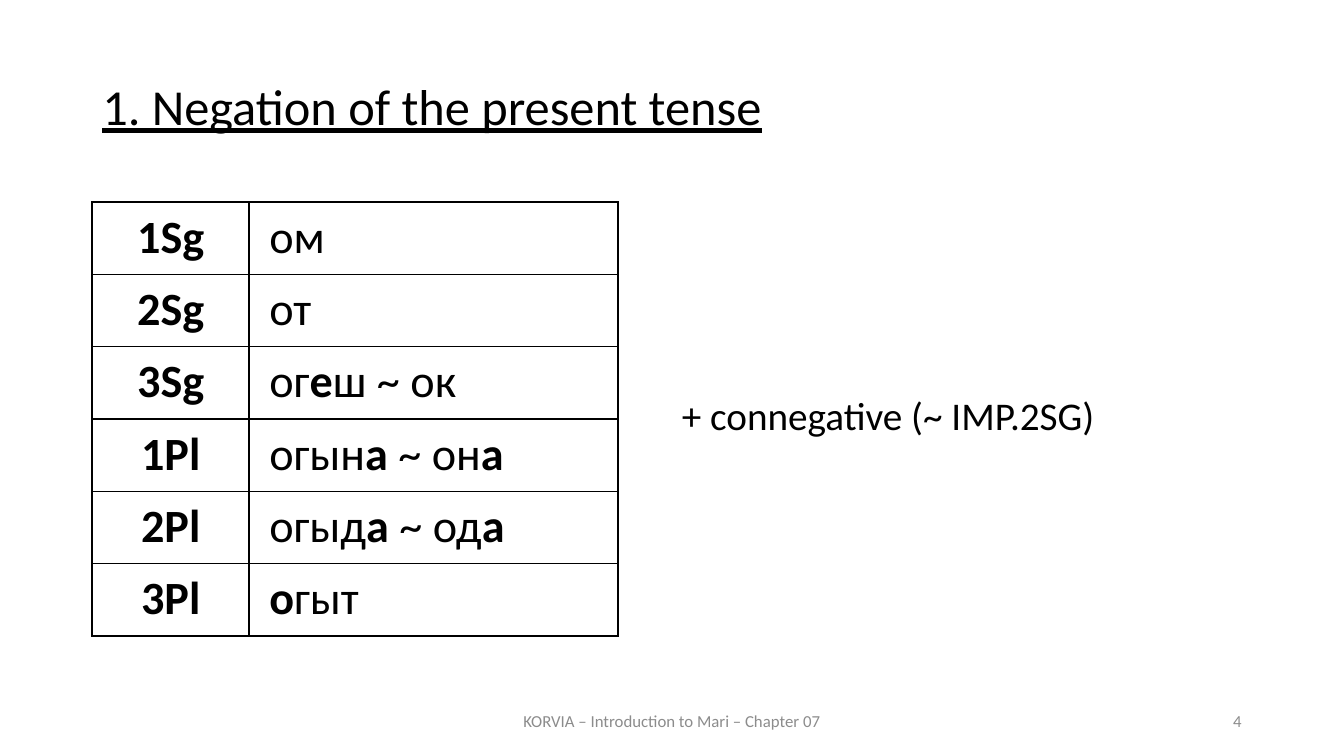
from dataclasses import dataclass

from lxml.etree import SubElement
from pptx import Presentation
from pptx.dml.color import RGBColor
from pptx.enum.text import MSO_ANCHOR as Anchor, PP_ALIGN as Align
from pptx.oxml.ns import qn
from pptx.util import Pt


@dataclass(frozen=True)
class Theme:
    font: str = "Calibri"
    ink: str = "000000"
    muted: str = "8C8C8C"
    title_size: int = 36
    table_size: int = 33
    body_size: int = 28
    footer_size: int = 12
    outer_line: float = 1.5
    inner_line: float = 1


# Asterisks enclose the stressed (bold) letters.
NEGATION_FORMS = [
    ("*1Sg*", "ом"),
    ("*2Sg*", "от"),
    ("*3Sg*", "ог*е*ш ~ ок"),
    ("*1Pl*", "огын*а* ~ он*а*"),
    ("*2Pl*", "огыд*а* ~ од*а*"),
    ("*3Pl*", "*о*гыт"),
]


class SlideBuilder:
    def __init__(self, slide, theme):
        self.slide = slide
        self.theme = theme

    def fill_text(self, frame, text, size, color, underline=None, **paragraph_format):
        """Fill a text frame, making the parts between asterisks bold."""
        paragraph = frame.paragraphs[0]
        for name, value in paragraph_format.items():
            setattr(paragraph, name, value)
        for index, part in enumerate(text.split("*")):
            if not part:
                continue
            run = paragraph.add_run()
            run.text = part
            font_format = {"name": self.theme.font, "size": Pt(size),
                           "bold": index % 2 == 1, "underline": underline}
            for name, value in font_format.items():
                setattr(run.font, name, value)
            run.font.color.rgb = RGBColor.from_string(color)

    def add_text(self, text, box, size, color, anchor=Anchor.MIDDLE, **text_format):
        shape = self.slide.shapes.add_textbox(*map(Pt, box))
        frame = shape.text_frame
        frame.word_wrap = True
        frame.vertical_anchor = anchor
        self.fill_text(frame, text, size, color, **text_format)

    def add_border(self, cell, side, width):
        line = SubElement(cell._tc.get_or_add_tcPr(), qn(f"a:ln{side}"), w=str(Pt(width)))
        fill = SubElement(line, qn("a:solidFill"))
        SubElement(fill, qn("a:srgbClr"), val=self.theme.ink)

    def add_table(self, rows, left, top, column_widths, row_height):
        theme = self.theme
        table = self.slide.shapes.add_table(
            len(rows), len(column_widths), Pt(left), Pt(top),
            Pt(sum(column_widths)), Pt(row_height * len(rows))).table
        table.first_row = table.horz_banding = False
        for column, width in zip(table.columns, column_widths):
            column.width = Pt(width)
        margins = {"margin_left": Pt(14.4), "margin_right": Pt(14.4),
                   "margin_top": Pt(2.2), "margin_bottom": Pt(0)}
        last = len(rows) - 1
        for row_index, row in enumerate(rows):
            table.rows[row_index].height = Pt(row_height)
            for column_index, text in enumerate(row):
                cell = table.cell(row_index, column_index)
                for name, value in margins.items():
                    setattr(cell, name, value)
                self.fill_text(cell.text_frame, text, theme.table_size, theme.ink,
                               alignment=Align.JUSTIFY if column_index else Align.CENTER,
                               line_spacing=1.07)
                widths = {
                    "L": theme.outer_line,
                    "R": theme.outer_line,
                    "T": theme.inner_line if row_index else theme.outer_line,
                    "B": theme.inner_line if row_index < last else theme.outer_line,
                }
                for side, width in widths.items():
                    self.add_border(cell, side, width)
                cell.fill.background()


def main():
    presentation = Presentation()
    presentation.slide_width, presentation.slide_height = Pt(960), Pt(540)
    theme = Theme()
    slide = presentation.slides.add_slide(presentation.slide_layouts[6])
    builder = SlideBuilder(slide, theme)

    builder.add_text("1. Negation of the present tense", (66, 54.7, 828, 60),
                     theme.title_size, theme.ink, anchor=Anchor.TOP, underline=True,
                     alignment=Align.JUSTIFY, line_spacing=0.9, space_before=Pt(12))
    builder.add_table(NEGATION_FORMS, 66, 144.3, (112, 263.5), 51.7)
    builder.add_text("+ connegative (~ IMP.2SG)", (480, 275, 324, 47.5),
                     theme.body_size, theme.ink, line_spacing=0.9, space_before=Pt(10))
    builder.add_text("KORVIA – Introduction to Mari – Chapter 07", (318, 500.5, 324, 28.75),
                     theme.footer_size, theme.muted, alignment=Align.CENTER)
    builder.add_text("4", (678, 500.5, 216, 28.75),
                     theme.footer_size, theme.muted, alignment=Align.RIGHT)

    presentation.save("out.pptx")


if __name__ == "__main__":
    main()
